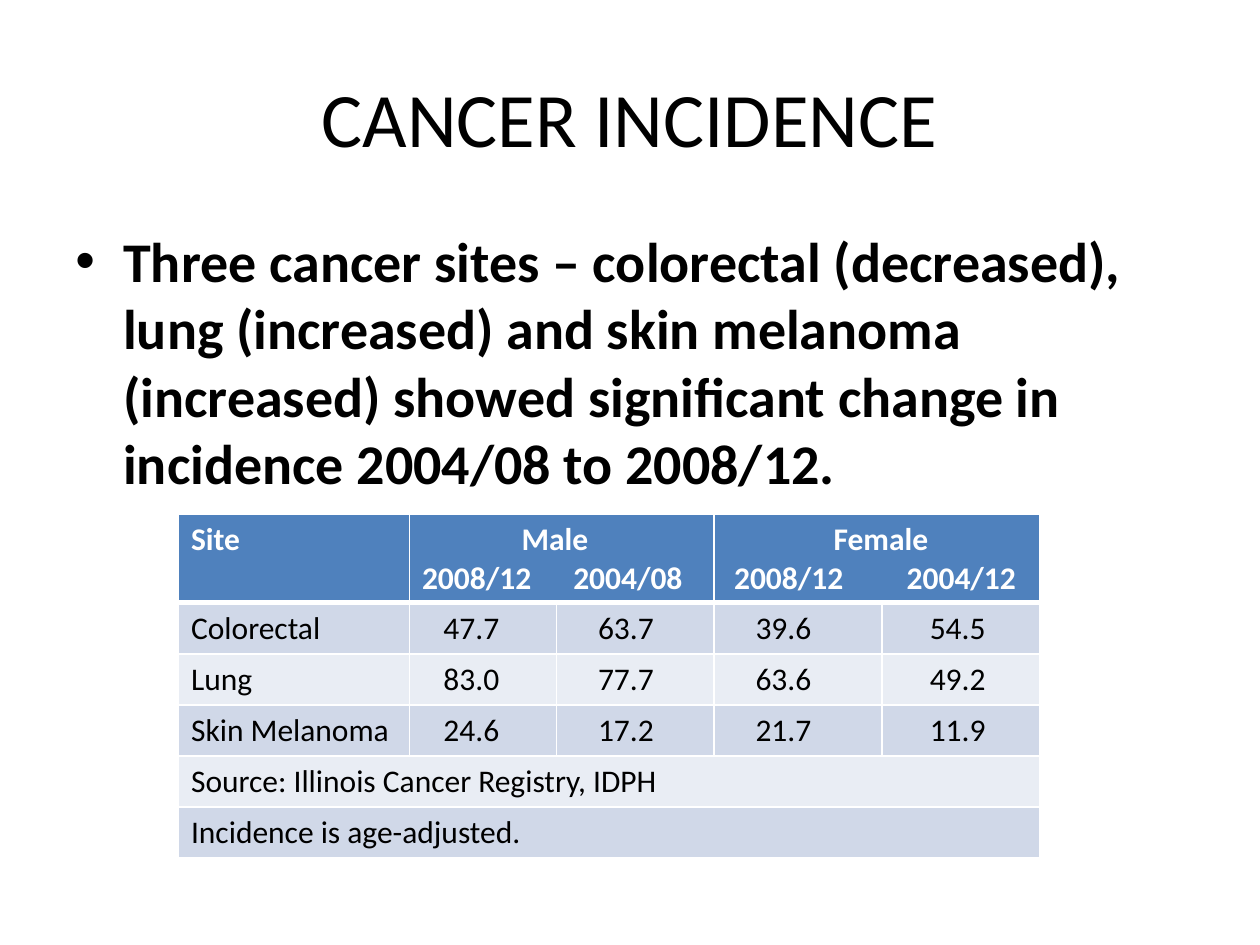
from pptx import Presentation
from pptx.dml.color import RGBColor
from pptx.enum.text import MSO_ANCHOR as Anchor, PP_ALIGN as Align
from pptx.oxml.ns import qn
from pptx.util import Inches, Pt
from lxml.etree import SubElement

WHITE = RGBColor(0xFF, 0xFF, 0xFF)
BLACK = RGBColor(0, 0, 0)
HEADER_BLUE = RGBColor(0x4F, 0x81, 0xBD)
BAND_DARK = RGBColor(0xD0, 0xD8, 0xE8)
BAND_LIGHT = RGBColor(0xE9, 0xED, 0xF4)

COLUMN_WIDTHS = (22, 14, 15, 16, 15)
HEADER_HEIGHT, ROW_HEIGHT = 8.4, 4.87
VALUE_INDENTS = (0, 0.17, 0.23, 0.23, 0.28)
SITES = (
    ("Colorectal", "47.7", "63.7", "39.6", "54.5"),
    ("Lung", "83.0", "77.7", "63.6", "49.2"),
    ("Skin Melanoma", "24.6", "17.2", "21.7", "11.9"),
)
FOOTNOTES = ("Source: Illinois Cancer Registry, IDPH", "Incidence is age-adjusted.")
# Column, heading, heading indent, line of years, tab stops of the years
GROUPS = (
    (1, "Male", 0.79, "2008/12\t2004/08", (1.2,)),
    (3, "Female", 0.85, "\t2008/12\t2004/12", (0.06, 1.43)),
)


def grid(units):
    """Length of a number of grid units; the slide is 120 units by 90."""
    return Inches(units / 12)


class SlideBuilder:
    font_name = "Calibri"

    def __init__(self, presentation):
        self.slide = presentation.slides.add_slide(presentation.slide_layouts[6])

    def add_text(self, paragraph, text, size, color=BLACK, bold=False):
        run = paragraph.add_run()
        run.text = text
        run.font.color.rgb = color
        style = {"name": self.font_name, "size": Pt(size), "bold": bold}
        for name, value in style.items():
            setattr(run.font, name, value)

    def indent(self, paragraph, left, first=0):
        properties = paragraph._p.get_or_add_pPr()
        properties.set("marL", str(Inches(left)))
        properties.set("indent", str(Inches(first)))
        return properties

    def tab_stops(self, paragraph, positions):
        stops = SubElement(paragraph._p.get_or_add_pPr(), qn("a:tabLst"))
        for position in positions:
            SubElement(stops, qn("a:tab"), pos=str(Inches(position)), algn="l")

    def text_box(self, left, top, width, height, anchor=Anchor.TOP):
        """Add a wrapping text box and return its first paragraph."""
        shape = self.slide.shapes.add_textbox(*map(grid, (left, top, width, height)))
        frame = shape.text_frame
        for name, value in {"word_wrap": True, "vertical_anchor": anchor}.items():
            setattr(frame, name, value)
        return frame.paragraphs[0]

    def title(self, text):
        paragraph = self.text_box(6, 3.6, 108, 15, Anchor.MIDDLE)
        paragraph.alignment = Align.CENTER
        self.add_text(paragraph, text, 44)

    def bullet(self, text):
        paragraph = self.text_box(6, 21, 108, 59.4)
        properties = self.indent(paragraph, 0.38, -0.38)
        spacing = SubElement(properties, qn("a:spcBef"))
        SubElement(spacing, qn("a:spcPct"), val="20000")
        SubElement(properties, qn("a:buFont"), typeface="Arial")
        SubElement(properties, qn("a:buChar"), char="•")
        self.add_text(paragraph, text, 32, bold=True)

    def table(self, left, top, widths, heights):
        frame = self.slide.shapes.add_table(
            len(heights), len(widths),
            *map(grid, (left, top, sum(widths), sum(heights))))
        table = frame.table
        for column, width in zip(table.columns, widths):
            column.width = grid(width)
        for index, height in enumerate(heights):
            table.rows[index].height = grid(height)
            color = HEADER_BLUE if index == 0 else (BAND_LIGHT, BAND_DARK)[index % 2]
            for column in range(len(widths)):
                self.paint_cell(table.cell(index, column), color,
                                top=3 if index == 1 else 1,
                                bottom=3 if index == 0 else 1)
        return table

    def paint_cell(self, cell, color, top, bottom):
        properties = cell._tc.get_or_add_tcPr()
        for side, points in {"L": 1, "R": 1, "T": top, "B": bottom}.items():
            line = SubElement(properties, qn(f"a:ln{side}"), w=str(Pt(points)))
            fill = SubElement(line, qn("a:solidFill"))
            SubElement(fill, qn("a:srgbClr"), val=str(WHITE))
        cell.fill.solid()
        cell.fill.fore_color.rgb = color

    def cell_text(self, cell, text, indent=0, header=False):
        paragraph = cell.text_frame.paragraphs[0]
        self.indent(paragraph, indent)
        self.add_text(paragraph, text, 18, WHITE if header else BLACK, header)


def fill_incidence_table(builder, table):
    builder.cell_text(table.cell(0, 0), "Site", header=True)
    for column, heading, indent, years, stops in GROUPS:
        cell = table.cell(0, column)
        cell.merge(table.cell(0, column + 1))
        builder.cell_text(cell, heading, indent, header=True)
        paragraph = cell.text_frame.add_paragraph()
        builder.tab_stops(paragraph, stops)
        builder.add_text(paragraph, years, 18, WHITE, bold=True)

    for row, values in enumerate(SITES, start=1):
        for column, (value, indent) in enumerate(zip(values, VALUE_INDENTS)):
            builder.cell_text(table.cell(row, column), value, indent)

    for row, note in enumerate(FOOTNOTES, start=1 + len(SITES)):
        cell = table.cell(row, 0)
        cell.merge(table.cell(row, len(COLUMN_WIDTHS) - 1))
        builder.cell_text(cell, note)


def main():
    presentation = Presentation()
    presentation.slide_width, presentation.slide_height = grid(120), grid(90)
    builder = SlideBuilder(presentation)
    builder.title("CANCER INCIDENCE")
    builder.bullet(
        "Three cancer sites – colorectal (decreased), lung (increased) and skin "
        "melanoma (increased) showed significant change in incidence 2004/08 to "
        "2008/12.")
    body_rows = len(SITES) + len(FOOTNOTES)
    heights = [HEADER_HEIGHT] + [ROW_HEIGHT] * body_rows
    fill_incidence_table(builder, builder.table(17, 49, COLUMN_WIDTHS, heights))
    presentation.save("out.pptx")


if __name__ == "__main__":
    main()
